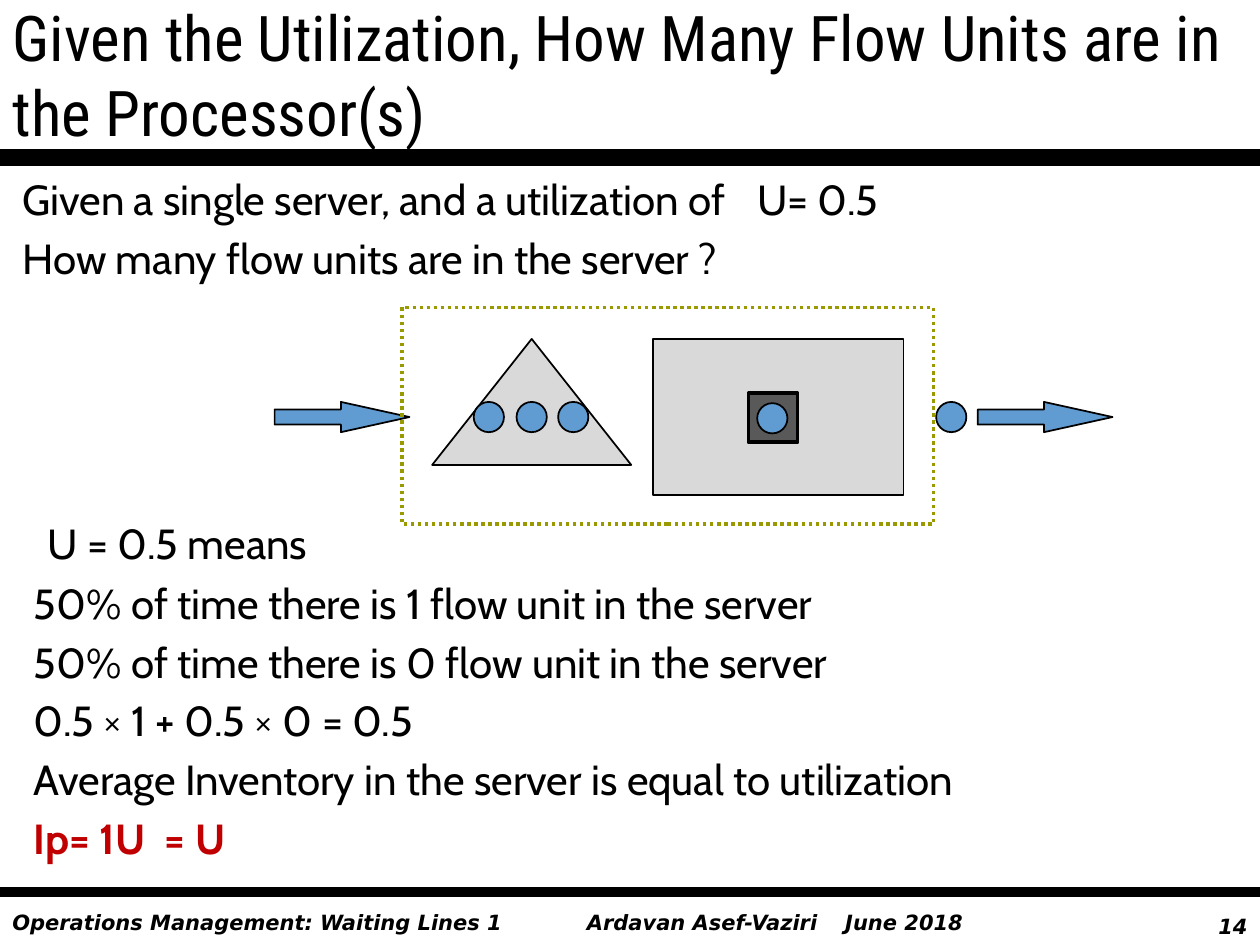
import pptx
import pptx.util
import pptx.dml.color
import pptx.enum.dml
import pptx.enum.shapes
import pptx.enum.text
import pptx.oxml
import pptx.oxml.ns
from dataclasses import dataclass
from pptx.util import Inches


@dataclass(frozen=True)
class Theme:
    black: str = "000000"
    flow: str = "609CD2"
    light: str = "D9D9D9"
    dark: str = "595959"
    boundary: str = "999900"
    accent: str = "C00000"
    title_font: str = "Roboto Condensed"
    body_font: str = "Cabin"
    footer_font: str = "DejaVu Sans"
    bullet_font: str = "Arial"
    title_size: int = 36
    lead_size: int = 28
    body_size: int = 24
    footer_size: int = 12


theme = Theme()
color = pptx.dml.color.RGBColor.from_string
shape_type = pptx.enum.shapes.MSO_SHAPE
alignment = pptx.enum.text.PP_ALIGN


def write_text(shape, lines, font_name, size, space=0, tab=None, bold=False):
    frame = shape.text_frame
    frame.word_wrap = True
    frame.auto_size = pptx.enum.text.MSO_AUTO_SIZE.NONE
    frame.text = "\n".join(lines)
    for paragraph in frame.paragraphs:
        paragraph.alignment = alignment.LEFT
        paragraph.space_before = pptx.util.Pt(space)
        if tab and "\t" in paragraph.text:
            properties = paragraph._p.get_or_add_pPr()
            tab_list = pptx.oxml.parse_xml(
                f'<a:tabLst {pptx.oxml.ns.nsdecls("a")}>'
                f'<a:tab pos="{Inches(tab)}" algn="l"/></a:tabLst>')
            properties.append(tab_list)
        for run in paragraph.runs:
            run.font.name = font_name
            run.font.size = pptx.util.Pt(size)
            run.font.bold = bold
            run.font.italic = bold
            run.font.color.rgb = color(theme.black)


def style_shape(shape, fill, line=theme.black, width=1):
    shape.shadow.inherit = False
    if fill:
        shape.fill.solid()
        shape.fill.fore_color.rgb = color(fill)
    else:
        shape.fill.background()
    shape.line.color.rgb = color(line)
    shape.line.width = pptx.util.Pt(width)


presentation = pptx.Presentation()
presentation.slide_width = Inches(10)
presentation.slide_height = Inches(7.5)
slide = presentation.slides.add_slide(presentation.slide_layouts[5])
shapes = slide.shapes

footers = [
    (9.25, 7.2, 0.75, "14"),
    (4.56, 7.17, 3.35, "Ardavan Asef-Vaziri\tJune 2018"),
    (0, 7.17, 4.67, "Operations Management: Waiting Lines 1"),
]
for left, top, width, text in footers:
    footer = shapes.add_textbox(Inches(left), Inches(top), Inches(width), Inches(0.3))
    write_text(footer, [text], theme.footer_font, theme.footer_size, tab=2.05, bold=True)
    if text == "14":
        footer.text_frame.paragraphs[0].alignment = alignment.RIGHT

for top, width in [(1.25, 10), (7.08, 6)]:
    rule = shapes.add_connector(pptx.enum.shapes.MSO_CONNECTOR.STRAIGHT,
                                Inches(0), Inches(top), Inches(10), Inches(top))
    rule.line.color.rgb = color(theme.black)
    rule.line.width = pptx.util.Pt(width)
    rule._element.spPr.append(
        pptx.oxml.parse_xml(f'<a:effectLst {pptx.oxml.ns.nsdecls("a")}/>'))

question = shapes.add_textbox(Inches(0.08), Inches(1.33), Inches(9.75), Inches(1.12))
write_text(question, [
    "Given a single server, and a utilization of\tU= 0.5",
    "How many flow units are in the server ?",
], theme.body_font, theme.body_size, space=4.8, tab=5.83)

title = shapes.title
title.left, title.top = Inches(0), Inches(0)
title.width, title.height = Inches(10), Inches(1.17)
title.text_frame.vertical_anchor = pptx.enum.text.MSO_ANCHOR.MIDDLE
write_text(title, ["Given the Utilization, How Many Flow Units are in the Processor(s)"],
           theme.title_font, theme.title_size)

builder = shapes.build_freeform(Inches(3.43), Inches(3.69))
builder.add_line_segments([(Inches(4.22), Inches(2.69)), (Inches(5.01), Inches(3.69))])
style_shape(builder.convert_to_shape(), theme.light)

for left, top, width, height, fill, line_width in [
    (5.18, 2.69, 1.99, 1.24, theme.light, 1),
    (5.94, 3.12, 0.39, 0.39, theme.dark, 2),
]:
    box = shapes.add_shape(shape_type.RECTANGLE, Inches(left), Inches(top),
                           Inches(width), Inches(height))
    style_shape(box, fill, width=line_width)

for left, top in [(3.76, 3.19), (4.1, 3.19), (4.43, 3.19), (6.01, 3.2), (7.43, 3.19)]:
    flow_unit = shapes.add_shape(shape_type.OVAL, Inches(left), Inches(top),
                                 Inches(0.24), Inches(0.24))
    style_shape(flow_unit, theme.flow)

for left in (7.76, 2.18):
    arrow = shapes.add_shape(shape_type.RIGHT_ARROW, Inches(left), Inches(3.19),
                             Inches(1.07), Inches(0.24))
    arrow.adjustments[0] = 0.5
    arrow.adjustments[1] = 2.265
    style_shape(arrow, theme.flow)

boundary = shapes.add_shape(shape_type.RECTANGLE, Inches(3.19), Inches(2.44),
                            Inches(4.22), Inches(1.72))
style_shape(boundary, None, theme.boundary, 2)
boundary.line.dash_style = pptx.enum.dml.MSO_LINE.ROUND_DOT

answer = shapes.add_textbox(Inches(0.17), Inches(4), Inches(9.75), Inches(3))
write_text(answer, [
    "",
    "50% of time there is 1 flow unit in the server",
    "50% of time there is 0 flow unit in the server",
    "0.5 × 1 + 0.5 × 0 = 0.5",
    "Average Inventory in the server is equal to utilization",
    "Ip= 1U\t= U",
], theme.body_font, theme.body_size, space=4.8, tab=1.04)

for text, font_name, size in [
    (" ", theme.bullet_font, theme.lead_size),
    ("U = 0.5 means", theme.body_font, theme.body_size),
]:
    run = answer.text_frame.paragraphs[0].add_run()
    run.text = text
    run.font.name = font_name
    run.font.size = pptx.util.Pt(size)
    run.font.color.rgb = color(theme.black)

for run in answer.text_frame.paragraphs[-1].runs:
    run.font.bold = True
    run.font.color.rgb = color(theme.accent)

presentation.save("out.pptx")
